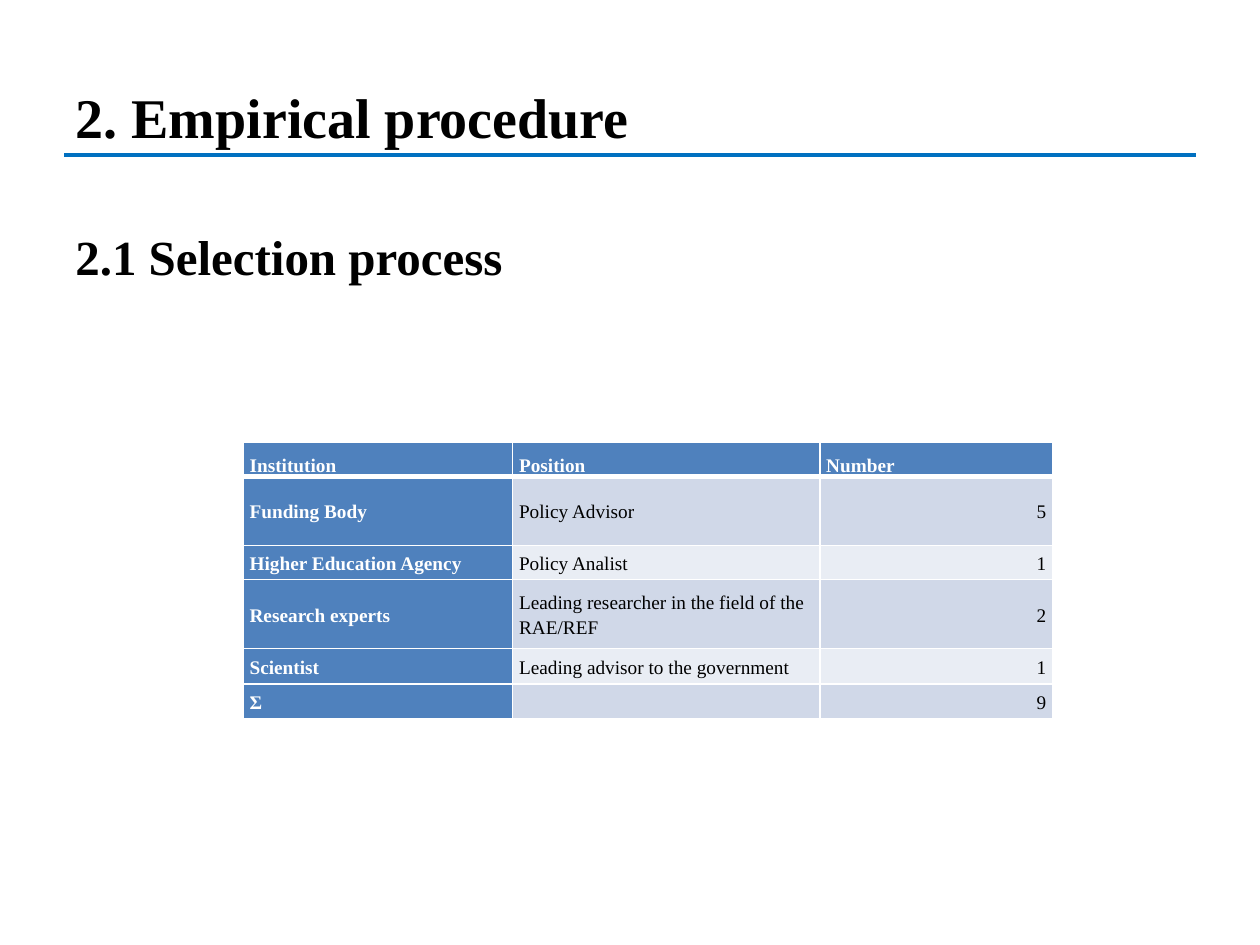
"""Build the slide on the selection process with its table of experts."""
from lxml import etree
from pptx import Presentation
from pptx.dml.color import RGBColor
from pptx.enum.shapes import MSO_CONNECTOR
from pptx.enum.text import MSO_ANCHOR, PP_ALIGN
from pptx.oxml.ns import qn
from pptx.util import Pt

LINE = MSO_CONNECTOR.STRAIGHT
MID, LOW = MSO_ANCHOR.MIDDLE, MSO_ANCHOR.BOTTOM
LEFT, RIGHT = PP_ALIGN.LEFT, PP_ALIGN.RIGHT
BLUE, WHITE, BLACK = "4F81BD", "FFFFFF", "000000"
BANDS = ["E9EDF4", "D0D8E8"]
WIDTHS = [154, 175.5, 133]
HEIGHTS = [19.5, 39.5, 19.5, 39.5, 20.2, 20.2]
ROWS = [
    ["Institution", "Position", "Number"],
    ["Funding Body", "Policy Advisor", "5"],
    ["Higher Education Agency", "Policy Analist", "1"],
    ["Research experts", "Leading researcher in the field of the RAE/REF", "2"],
    ["Scientist", "Leading advisor to the government", "1"],
    ["Σ", "", "9"],
]


def style(para, size, tone=BLACK, bold=True):
    """Format the runs of a paragraph."""
    for run in para.runs:
        font = run.font
        font.name, font.size, font.bold = "Times New Roman", Pt(size), bold
        font.color.rgb = RGBColor.from_string(tone)


def border(cell, sides):
    """Draw white borders, with a width in points for each side."""
    props = cell._tc.get_or_add_tcPr()
    for spot, (side, width) in enumerate(sides.items()):
        edge = etree.Element(qn(f"a:ln{side}"), w=str(Pt(width)))
        fill = etree.SubElement(edge, qn("a:solidFill"))
        etree.SubElement(fill, qn("a:srgbClr"), val=WHITE)
        props.insert(spot, edge)


deck = Presentation()
deck.slide_width, deck.slide_height = Pt(720), Pt(540)
slide = deck.slides.add_slide(deck.slide_layouts[5])

rule = slide.shapes.add_connector(LINE, Pt(36.7), Pt(88.6), Pt(683.3), Pt(88.6))
rule.line.color.rgb = RGBColor.from_string("0070C0")
rule.line.width = Pt(1.75)
etree.SubElement(rule._element.spPr, qn("a:effectLst"))

title = slide.shapes.title
title.left, title.top, title.width, title.height = Pt(36), Pt(21.6), Pt(648), Pt(90)
title.text_frame.text = "2. Empirical procedure"
title.text_frame.vertical_anchor = MID
head = title.text_frame.paragraphs[0]
head.alignment = LEFT
style(head, 32)

body = slide.shapes.add_textbox(Pt(36), Pt(126), Pt(648), Pt(356.4))
body.text_frame.word_wrap = True
body.text_frame.text = "2.1 Selection process"
sub = body.text_frame.paragraphs[0]
sub.space_before = Pt(3.6)
style(sub, 28)

frame = slide.shapes.add_table(len(ROWS), len(WIDTHS), Pt(139), Pt(252.7),
                               Pt(sum(WIDTHS)), Pt(sum(HEIGHTS)))
table = frame.table
for col, width in zip(table.columns, WIDTHS):
    col.width = Pt(width)
for r, (texts, height) in enumerate(zip(ROWS, HEIGHTS)):
    table.rows[r].height = Pt(height)
    for c, text in enumerate(texts):
        cell = table.cell(r, c)
        lead = r == 0 or c == 0
        cell.fill.solid()
        cell.fill.fore_color.rgb = RGBColor.from_string(BLUE if lead else BANDS[r % 2])
        cell.margin_left = cell.margin_right = Pt(3.6)
        cell.margin_top = cell.margin_bottom = 0
        cell.vertical_anchor = MID if r else LOW
        cell.text_frame.text = text
        para = cell.text_frame.paragraphs[0]
        para.alignment = RIGHT if r and c == 2 else LEFT
        para.line_spacing, para.space_after = 1.15, Pt(10)
        style(para, 11, WHITE if lead else BLACK, lead)
        if not text:
            etree.SubElement(para._p, qn("a:endParaRPr"), sz="1100")
        border(cell, {"L": 1, "R": 1, "T": 3 if r == 1 else 1, "B": 1 if r else 3})

deck.save("out.pptx")
